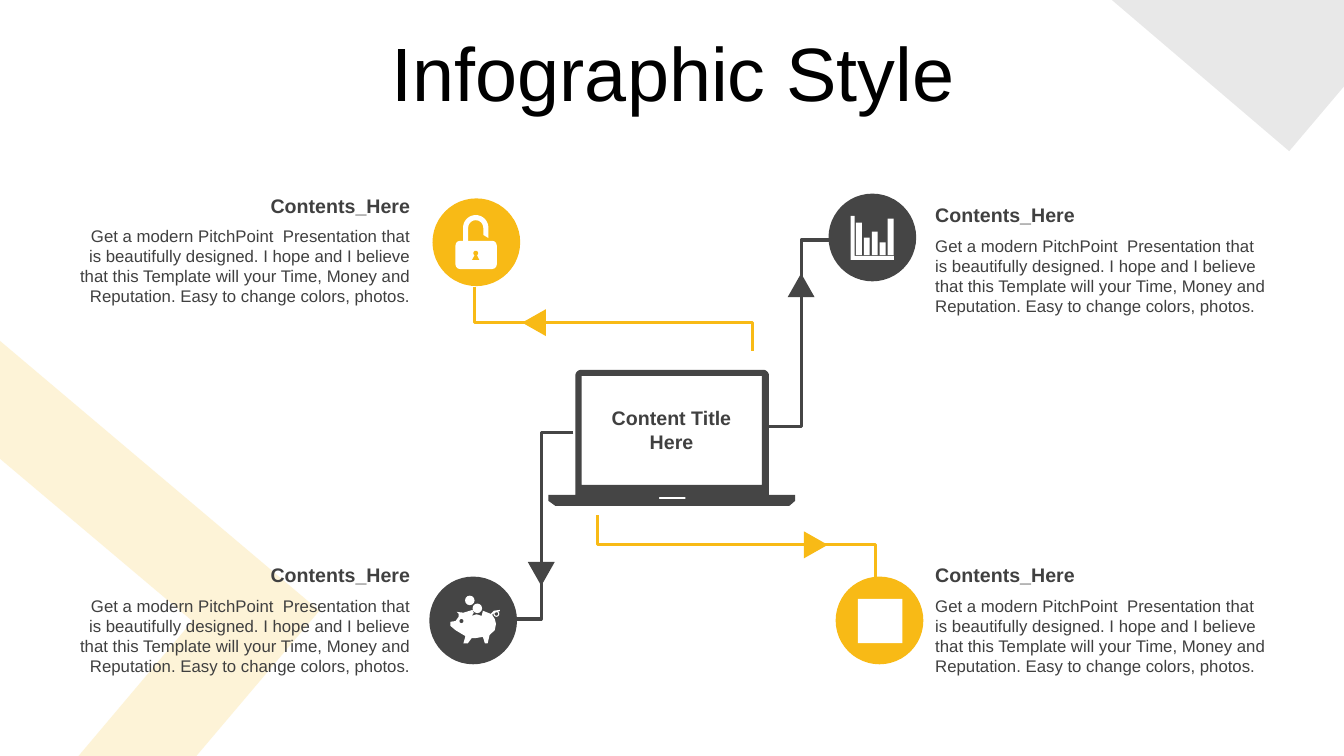
"""Build the infographic slide with a laptop linked to four captioned icons."""
import math

import pptx
import pptx.dml.color
import pptx.enum.shapes
import pptx.enum.text
import pptx.oxml
import pptx.oxml.ns
import pptx.util

Cm = pptx.util.Cm
Pt = pptx.util.Pt
RGB = pptx.dml.color.RGBColor.from_string
MSO = pptx.enum.shapes.MSO_SHAPE
ALIGN = pptx.enum.text.PP_ALIGN
ANCHOR = pptx.enum.text.MSO_ANCHOR
COLORS = {"yellow": "F8BA16", "dark": "454545", "text": "404040",
          "white": "FFFFFF", "black": "000000"}
BODY = ("Get a modern PitchPoint  Presentation that is beautifully designed. "
        "I hope and I believe that this Template will your Time, Money and "
        "Reputation. Easy to change colors, photos.")

prs = pptx.Presentation()
prs.slide_width, prs.slide_height = Cm(33.87), Cm(19.05)
s = prs.slides.add_slide(prs.slide_layouts[5])


def arc(cx, cy, radius, start, end):
    """Return points along a circle, with angles in degrees clockwise."""
    angles = [math.radians(start + (end - start) * i / 16) for i in range(17)]
    return [(cx + radius * math.cos(a), cy + radius * math.sin(a)) for a in angles]


def draw(color, contours=None, preset=None, box=None, line=0):
    """Draw contours or a preset shape, filled or outlined, in centimetres."""
    if contours:
        pts = [[(Cm(x), Cm(y)) for x, y in contour] for contour in contours]
        fb = s.shapes.build_freeform(*pts[0][0])
        fb.add_line_segments(pts[0][1:], close=not line)
        for contour in pts[1:]:
            fb.move_to(*contour[0])
            fb.add_line_segments(contour[1:], close=not line)
        sp = fb.convert_to_shape()
    else:
        sp = s.shapes.add_shape(preset, *[Cm(v) for v in box])
    sp.shadow.inherit = False
    if line:
        sp.fill.background()
        sp.line.color.rgb = RGB(COLORS[color])
        sp.line.width = Pt(line)
    else:
        sp.fill.solid()
        sp.fill.fore_color.rgb = RGB(COLORS[color])
        sp.line.fill.background()
    return sp


chevron = [(0, 8.59), (8.05, 15.39), (4.95, 19.05), (1.98, 19.05), (4.85, 15.65), (0, 11.56)]
corner = [(28.02, 0), (33.87, 0), (33.87, 2.18), (32.49, 3.81)]
for color, contour, alpha in [("yellow", chevron, 17), ("dark", corner, 12)]:
    sp = draw(color, [contour])
    clr = sp._element.spPr.find(".//" + pptx.oxml.ns.qn("a:srgbClr"))
    clr.append(pptx.oxml.parse_xml(
        f'<a:alpha {pptx.oxml.ns.nsdecls("a")} val="{alpha * 1000}"/>'))

title = s.shapes.title
title.left, title.top, title.width, title.height = Cm(0.89), Cm(0.94), Cm(32.16), Cm(2.01)
tf = title.text_frame
tf.auto_size = pptx.enum.text.MSO_AUTO_SIZE.NONE
tf.vertical_anchor = ANCHOR.MIDDLE
p = tf.paragraphs[0]
p.alignment, p.line_spacing, p.space_before = ALIGN.CENTER, 0.9, Pt(10)
r = p.add_run()
r.text = "Infographic Style"
r.font.name, r.font.size, r.font.color.rgb = "Arial", Pt(54), RGB(COLORS["black"])

links = [
    ("dark", [(14.45, 10.9), (13.64, 10.9), (13.64, 15.6), (12.95, 15.6)], (13.64, 14.46), 180),
    ("dark", [(19.38, 10.74), (20.19, 10.74), (20.19, 6.05), (20.88, 6.05)], (20.19, 7.19), 0),
    ("yellow", [(15.06, 12.98), (15.06, 13.72), (22.07, 13.72), (22.07, 14.58)], (20.56, 13.73), 90),
    ("yellow", [(18.97, 8.84), (18.97, 8.13), (11.96, 8.13), (11.96, 7.24)], (13.46, 8.13), 270),
]
for color, route, (cx, cy), angle in links:
    draw(color, [route], line=2.25)
    sp = draw(color, preset=MSO.ISOSCELES_TRIANGLE, box=(cx - 0.34, cy - 0.3, 0.68, 0.6))
    sp.rotation = angle

case = ([(14.5, 12.47)] + arc(14.65, 9.47, 0.15, 180, 270) + arc(19.23, 9.47, 0.15, 270, 360)
        + [(19.38, 12.47), (20.04, 12.47), (20.04, 12.62), (19.89, 12.75),
           (14, 12.75), (13.82, 12.62), (13.82, 12.47)])
screen = [(14.66, 9.47), (14.66, 12.22), (19.2, 12.22), (19.2, 9.47)]
notch = [(16.61, 12.52), (16.61, 12.58), (17.27, 12.58), (17.27, 12.52)]
draw("dark", [case, screen, notch])

for color, x, y in [("dark", 20.88, 4.88), ("yellow", 21.06, 14.53),
                    ("dark", 10.82, 14.53), ("yellow", 10.9, 5)]:
    draw(color, preset=MSO.OVAL, box=(x, y, 2.21, 2.21))

shackle = ([(11.67, 6.15)] + arc(11.99, 5.74, 0.32, 180, 360)
           + [(12.31, 6), (12.18, 5.92)] + arc(11.99, 5.74, 0.19, 360, 180) + [(11.8, 6.15)])
draw("white", [shackle])
sp = draw("white", preset=MSO.ROUNDED_RECTANGLE, box=(11.48, 6.07, 1.04, 0.71))
sp.adjustments[0] = 0.16
draw("yellow", [arc(11.99, 6.38, 0.06, 120, 420) + [(12.08, 6.55), (11.9, 6.55)]])

draw("white", [[(21.44, 5.44), (21.54, 5.44), (21.54, 6.45), (22.53, 6.45),
                (22.53, 6.55), (21.44, 6.55)]])
for i, top in enumerate([5.61, 5.99, 5.84, 6.11, 5.51]):
    draw("white", preset=MSO.RECTANGLE, box=(21.57 + 0.2 * i, top, 0.15, 6.43 - top))

pig = [(12.5, 15.72), (12.47, 15.88), (12.34, 16), (12.29, 16.21), (12.22, 16.21),
       (12.17, 16.05), (11.99, 16.08), (11.89, 16.08), (11.79, 16.21), (11.68, 16.21),
       (11.73, 16.03), (11.48, 15.88), (11.35, 15.77), (11.35, 15.67), (11.48, 15.65),
       (11.56, 15.54), (11.56, 15.47), (11.51, 15.42), (11.68, 15.44), (11.91, 15.37),
       (11.94, 15.44), (11.89, 15.52), (12.01, 15.48), (12.14, 15.52), (12.17, 15.39),
       (12.37, 15.47), (12.45, 15.39), (12.6, 15.37), (12.6, 15.4), (12.47, 15.44),
       (12.4, 15.49), (12.47, 15.6)]
draw("white", [pig])
draw("white", [arc(12.51, 15.47, 0.06, 0, 360)], line=0.75)
for color, cx, cy, radius in [("white", 12.03, 15.33, 0.12), ("white", 11.84, 15.13, 0.12),
                              ("dark", 11.63, 15.65, 0.05)]:
    draw(color, preset=MSO.OVAL, box=(cx - radius, cy - radius, 2 * radius, 2 * radius))

draw("white", preset=MSO.RECTANGLE, box=(21.62, 15.09, 1.12, 1.12))

labels = [(15.11, 10.11, 3.63, 1.45, ["Content Title", "Here"], 14, ALIGN.CENTER)]
for left, top, align in [(23.32, 5, ALIGN.LEFT), (23.32, 14.07, ALIGN.LEFT),
                         (1.7, 14.07, ALIGN.RIGHT), (1.7, 4.75, ALIGN.RIGHT)]:
    labels.append((left, top + 0.81, 8.89, 2.31, [BODY], 12, align))
    labels.append((left, top, 8.89, 0.86, ["Contents_Here"], 14, align))
for left, top, width, height, lines, size, align in labels:
    tf = s.shapes.add_textbox(Cm(left), Cm(top), Cm(width), Cm(height)).text_frame
    tf.word_wrap = True
    for i, text in enumerate(lines):
        p = tf.add_paragraph() if i else tf.paragraphs[0]
        p.alignment = align
        r = p.add_run()
        r.text = text
        r.font.name, r.font.size, r.font.bold = "Arial", Pt(size), size == 14
        r.font.color.rgb = RGB(COLORS["text"])

prs.save("out.pptx")
